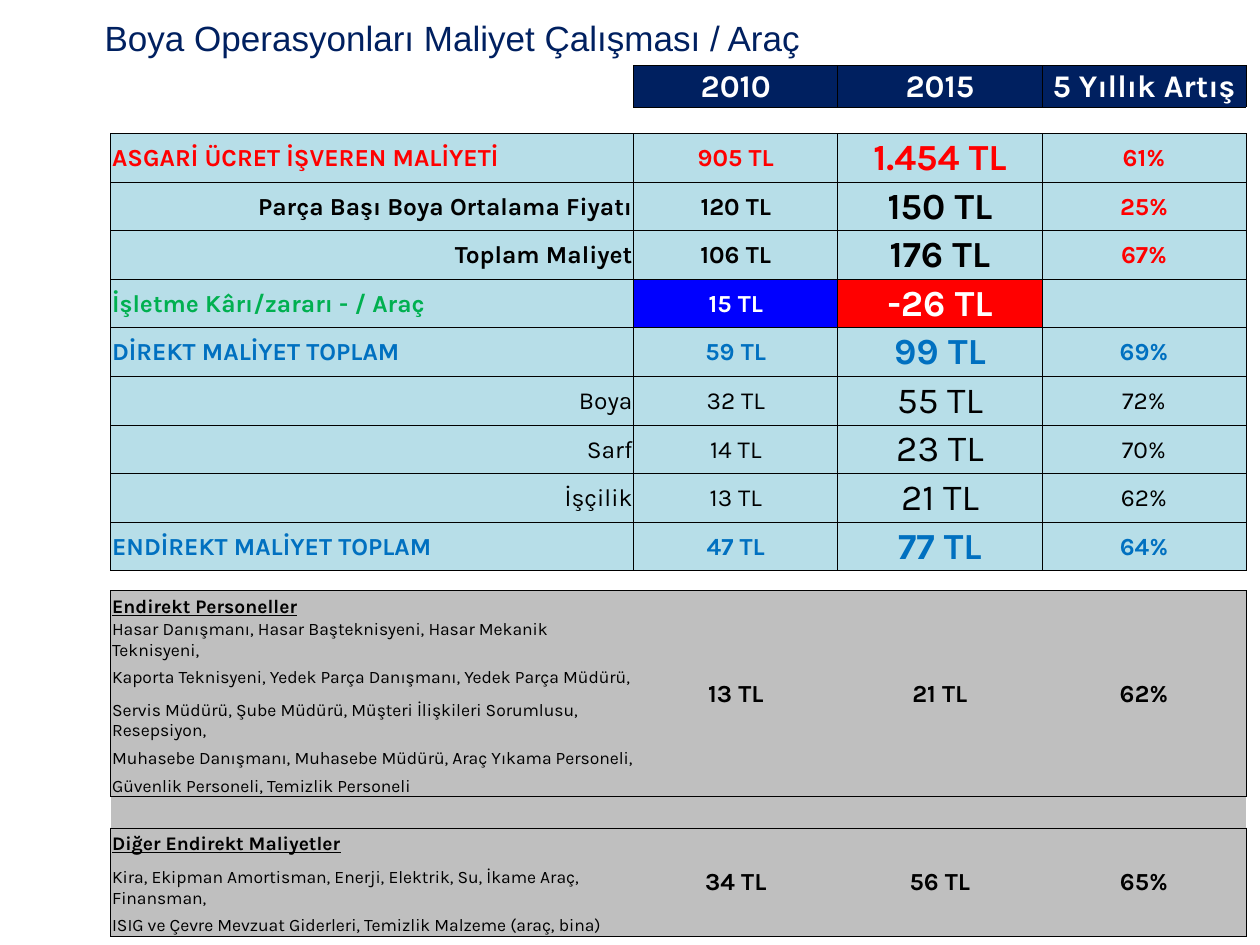
from dataclasses import dataclass

import lxml.etree
import pptx
import pptx.dml.color
import pptx.enum.text
import pptx.oxml.ns
import pptx.util

Inches = pptx.util.Inches
Align = pptx.enum.text.PP_ALIGN
Anchor = pptx.enum.text.MSO_ANCHOR
qn = pptx.oxml.ns.qn

NAVY, BLACK, WHITE, RED = "002060", "000000", "FFFFFF", "FF0000"
GREEN, BLUE, DEEP_BLUE = "00B050", "0070C0", "0000FF"
PALE, GREY = "B7DEE8", "BFBFBF"
NO_STYLE = "{2D5ABB26-0587-4C30-8999-92F81FD0307C}"
FONT = "Karla"


@dataclass
class CostRow:
    label: str
    values: tuple[str, str, str]
    color: str = BLACK
    value_color: str = BLACK
    rise_color: str = BLACK
    bold: bool = True
    align: Align = Align.RIGHT
    fills: tuple[str, str, str] = (PALE, PALE, PALE)


@dataclass
class CostGroup:
    title: str
    lines: list[str]
    values: tuple[str, str, str]
    heights: list[float]


HEADERS = ["2010", "2015", "5 Yıllık Artış"]
COSTS = [
    CostRow("ASGARİ ÜCRET İŞVEREN MALİYETİ", ("905 TL", "1.454 TL", "61%"),
            RED, RED, RED, align=Align.LEFT),
    CostRow("Parça Başı Boya Ortalama Fiyatı", ("120 TL", "150 TL", "25%"), rise_color=RED),
    CostRow("Toplam Maliyet", ("106 TL", "176 TL", "67%"), rise_color=RED),
    CostRow("İşletme Kârı/zararı - / Araç", ("15 TL", "-26 TL", ""),
            GREEN, WHITE, align=Align.LEFT, fills=(DEEP_BLUE, RED, PALE)),
    CostRow("DİREKT MALİYET TOPLAM", ("59 TL", "99 TL", "69%"),
            BLUE, BLUE, BLUE, align=Align.LEFT),
    CostRow("Boya", ("32 TL", "55 TL", "72%"), bold=False),
    CostRow("Sarf", ("14 TL", "23 TL", "70%"), bold=False),
    CostRow("İşçilik", ("13 TL", "21 TL", "62%"), bold=False),
    CostRow("ENDİREKT MALİYET TOPLAM", ("47 TL", "77 TL", "64%"),
            BLUE, BLUE, BLUE, align=Align.LEFT),
]
STAFF = CostGroup(
    "Endirekt Personeller",
    ["Hasar Danışmanı, Hasar Başteknisyeni, Hasar Mekanik Teknisyeni,",
     "Kaporta Teknisyeni, Yedek Parça Danışmanı, Yedek Parça Müdürü,",
     "Servis Müdürü, Şube Müdürü, Müşteri İlişkileri Sorumlusu, Resepsiyon,",
     "Muhasebe Danışmanı, Muhasebe Müdürü, Araç Yıkama Personeli,",
     "Güvenlik Personeli, Temizlik Personeli"],
    ("13 TL", "21 TL", "62%"), [0.22, 0.22, 0.22, 0.42, 0.22, 0.22])
OTHER = CostGroup(
    "Diğer Endirekt Maliyetler",
    ["Kira, Ekipman Amortisman, Enerji, Elektrik, Su, İkame Araç, Finansman,",
     "ISIG ve Çevre Mevzuat Giderleri, Temizlik Malzeme (araç, bina)"],
    ("34 TL", "56 TL", "65%"), [0.22, 0.42, 0.22])

COL_WIDTHS = [4.15, 1.62, 1.62, 1.62]
COSTS_HEIGHT = 3.47
FIRST_COST = 2
STAFF_GAP = FIRST_COST + len(COSTS)
STAFF_TOP = STAFF_GAP + 1
OTHER_GAP = STAFF_TOP + len(STAFF.heights)
OTHER_TOP = OTHER_GAP + 1
ROW_HEIGHTS = [0.33, 0.21, *[COSTS_HEIGHT / len(COSTS)] * len(COSTS), 0.16,
               *STAFF.heights, 0.25, *OTHER.heights]


def rgb(color: str) -> pptx.dml.color.RGBColor:
    return pptx.dml.color.RGBColor.from_string(color)


def write(p, text: str, size: float, color: str, name: str = FONT, **extra) -> None:
    r = p.add_run()
    r.text = text
    r.font.color.rgb = rgb(color)
    for key, value in {"size": pptx.util.Pt(size), "name": name, **extra}.items():
        setattr(r.font, key, value)


def set_borders(cell, sides: str) -> None:
    """Draw thin black lines on the sides named in a string such as "LRTB"."""
    tc_pr = cell._tc.get_or_add_tcPr()
    for side in "LRTB":
        ln = lxml.etree.SubElement(tc_pr, qn(f"a:ln{side}"), w="6350")
        if side in sides:
            fill = lxml.etree.SubElement(ln, qn("a:solidFill"))
            lxml.etree.SubElement(fill, qn("a:srgbClr"), val=BLACK)
        else:
            lxml.etree.SubElement(ln, qn("a:noFill"))


def fill_cell(cell, text: str = "", size: float = 14, color: str = BLACK,
              fill: str | None = None, sides: str = "LRTB", align: Align = Align.CENTER,
              anchor: Anchor = Anchor.MIDDLE, **extra) -> None:
    set_borders(cell, sides)
    layout = {"margin_left": Inches(0.01), "margin_right": Inches(0.01),
              "margin_top": Inches(0.01), "margin_bottom": 0, "vertical_anchor": anchor}
    for key, value in layout.items():
        setattr(cell, key, value)
    if fill:
        cell.fill.solid()
        cell.fill.fore_color.rgb = rgb(fill)
    else:
        cell.fill.background()
    p = cell.text_frame.paragraphs[0]
    p.alignment = align
    if text:
        write(p, text, size, color, **extra)
    else:
        # A small end mark keeps empty cells from stretching their row
        lxml.etree.SubElement(p._p, qn("a:endParaRPr"), sz="600")


def fill_cost_row(tbl, i: int, row: CostRow) -> None:
    fill_cell(tbl.cell(i, 0), row.label, 14, row.color, PALE, align=row.align, bold=row.bold)
    colors = (row.value_color, row.value_color, row.rise_color)
    for j, (text, size, color, fill) in enumerate(
            zip(row.values, (14, 21, 14), colors, row.fills), 1):
        fill_cell(tbl.cell(i, j), text, size, color, fill, bold=row.bold)


def fill_group(tbl, top: int, group: CostGroup) -> None:
    """Fill a framed block: text lines on the left, merged values on the right."""
    bottom = top + len(group.lines)
    for i, text in enumerate([group.title, *group.lines], top):
        edges = ("T" if i == top else "") + ("B" if i == bottom else "")
        heading = i == top
        fill_cell(tbl.cell(i, 0), text, 11 if heading else 10, fill=GREY, sides="L" + edges,
                  align=Align.LEFT, anchor=Anchor.BOTTOM, bold=heading, underline=heading)
        for j, value in enumerate(group.values, 1):
            right = "R" if j == len(group.values) else ""
            fill_cell(tbl.cell(i, j), value if heading else "", fill=GREY,
                      sides=right + ("TB" if heading else edges), bold=True)
    for j in range(1, len(COL_WIDTHS)):
        tbl.cell(top, j).merge(tbl.cell(bottom, j))


def add_cost_table(s) -> None:
    frame = s.shapes.add_table(len(ROW_HEIGHTS), len(COL_WIDTHS), Inches(0.88), Inches(0.52),
                               Inches(sum(COL_WIDTHS)), Inches(sum(ROW_HEIGHTS)))
    tbl = frame.table
    tbl.first_row = tbl.horz_banding = False
    tbl._tbl.tblPr.find(qn("a:tableStyleId")).text = NO_STYLE
    for col, width in zip(tbl.columns, COL_WIDTHS):
        col.width = Inches(width)
    for row, height in zip(tbl.rows, ROW_HEIGHTS):
        row.height = Inches(height)

    fill_cell(tbl.cell(0, 0), sides="R")
    for j, text in enumerate(HEADERS, 1):
        fill_cell(tbl.cell(0, j), text, 18, WHITE, NAVY, bold=True)
    for i, fill in ((1, None), (STAFF_GAP, None), (OTHER_GAP, GREY)):
        for j in range(len(COL_WIDTHS)):
            fill_cell(tbl.cell(i, j), fill=fill, sides="B" if (i, j) == (1, 0) else "TB")
    for i, row in enumerate(COSTS, FIRST_COST):
        fill_cost_row(tbl, i, row)
    fill_group(tbl, STAFF_TOP, STAFF)
    fill_group(tbl, OTHER_TOP, OTHER)


def add_title(s, text: str) -> None:
    tf = s.shapes.add_textbox(Inches(0.83), Inches(0.07), Inches(8.98), Inches(0.45)).text_frame
    layout = {"word_wrap": True, "vertical_anchor": Anchor.MIDDLE, "margin_left": 0,
              "margin_right": 0, "margin_top": 0, "margin_bottom": 0}
    for key, value in layout.items():
        setattr(tf, key, value)
    write(tf.paragraphs[0], text, 20, NAVY, "Arial")


def main() -> None:
    prs = pptx.Presentation()
    prs.slide_width, prs.slide_height = Inches(10), Inches(7.5)
    s = prs.slides.add_slide(prs.slide_layouts[6])
    add_cost_table(s)
    add_title(s, "Boya Operasyonları Maliyet Çalışması / Araç")
    prs.save("out.pptx")


if __name__ == "__main__":
    main()
